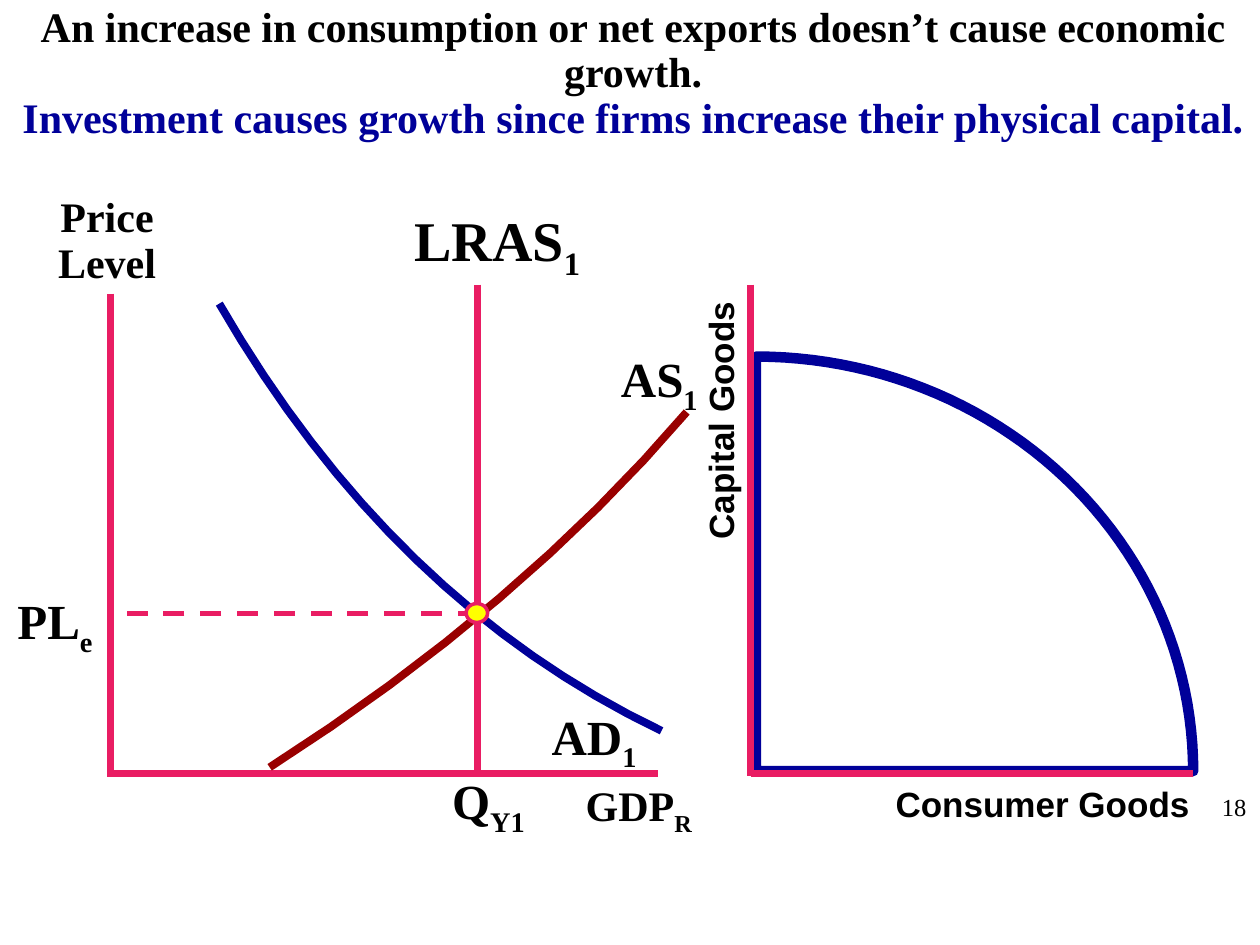
import math
import pptx
import pptx.util
import pptx.dml.color
import pptx.oxml.ns
from pptx.enum.dml import MSO_LINE
from pptx.enum.shapes import MSO_CONNECTOR, MSO_SHAPE
from pptx.enum.text import MSO_ANCHOR, PP_ALIGN
from lxml import etree

# All lengths are cells of a grid, 100 columns by 75 rows.
COLS, ROWS = 100, 75
CELL = pptx.util.Inches(10) // COLS

HUES = {"ink": "000000", "pink": "E91D63", "navy": "000099",
        "red": "990000", "gold": "FFFF00"}
SERIF, SANS = "Times New Roman", "Arial"
ALIGN = {"l": PP_ALIGN.LEFT, "c": PP_ALIGN.CENTER, "r": PP_ALIGN.RIGHT}

# Lines of text: (words, subscript, colour)
TITLE = [
    ("An increase in consumption or net exports doesn’t cause economic growth.", "", "ink"),
    ("Investment causes growth since firms increase their physical capital.", "", "navy"),
]
PRICE = [("Price", "", "ink"), ("Level", "", "ink")]

# Labels: (words, subscript, box, size)
MARKS = [
    ("GDP", "R", (45.5, 61.4, 10.6, 5), 24),
    ("AD", "1", (42.8, 55.6, 9, 5.7), 28),
    ("PL", "e", (0.4, 46.4, 8.1, 5.7), 28),
    ("AS", "1", (48.3, 27.2, 8.4, 5.7), 28),
    ("LRAS", "1", (31.9, 15.8, 15.5, 6.4), 32),
    ("Q", "Y1", (34.9, 60.7, 8.3, 5.7), 28),
]

# Curves: (start, control, end, steps, colour)
CURVES = [
    ((17.4, 24.1), (31.05, 47.75), (52.5, 58), 16, "navy"),
    ((21.4, 60.9), (41.25, 48.2), (54.5, 32.7), 8, "red"),
]

BASE = 61.4
AXES = [
    ((8.8, 23.3), (8.8, 61.6)), ((8.5, BASE), (52.2, BASE)),
    ((59.6, 22.6), (59.6, 61.6)), ((59.6, BASE), (94.7, BASE)),
]
LRAS = ((37.9, 22.6), (37.9, BASE))
GUIDE = ((38, 48.7), (9.3, 48.7))
POINT = (37, 47.9, 1.7, 1.5)
HUB, REACH = (60, 61.2), (34.7, 32.9)  # centre and radii of the frontier

deck = pptx.Presentation()
deck.slide_width, deck.slide_height = COLS * CELL, ROWS * CELL
slide = deck.slides.add_slide(deck.slide_layouts[6])
shapes = slide.shapes


def grid(*cells):
    return [round(c * CELL) for c in cells]


def hue(name):
    return pptx.dml.color.RGBColor.from_string(HUES[name])


def stroke(shape, color, width):
    shape.line.color.rgb = hue(color)
    shape.line.width = pptx.util.Pt(width)


def text(lines, box, size=24, font=SERIF, bold=True, align="l", space=None, turn=0):
    frame = shapes.add_textbox(*grid(*box))
    frame.rotation = turn
    body = frame.text_frame
    body.word_wrap = True
    body.vertical_anchor = MSO_ANCHOR.TOP
    for i, (words, sub, color) in enumerate(lines):
        para = body.paragraphs[0] if i == 0 else body.add_paragraph()
        para.alignment = ALIGN[align]
        if space:
            para.line_spacing = space
        for part, drop in ((words, False), (sub, True)):
            if not part:
                continue
            run = para.add_run()
            run.text = part
            run.font.name, run.font.size = font, pptx.util.Pt(size)
            run.font.bold = bold
            run.font.color.rgb = hue(color)
            if drop:
                run.font._element.set("baseline", "-25000")


def rule(ends, width=4, dash=None):
    line = shapes.add_connector(MSO_CONNECTOR.STRAIGHT, *grid(*ends[0], *ends[1]))
    stroke(line, "pink", width)
    if dash:
        line.line.dash_style = dash
    etree.SubElement(line._element.spPr, pptx.oxml.ns.qn("a:effectLst"))


def trace(points, color, width, close=False):
    """Draw an unfilled outline through the points."""
    dots = [grid(*p) for p in points]
    pen = shapes.build_freeform(*dots[0], scale=1.0)
    pen.add_line_segments(dots[1:], close=close)
    shape = pen.convert_to_shape()
    shape.fill.background()
    shape.shadow.inherit = False
    stroke(shape, color, width)
    etree.SubElement(shape.line._get_or_add_ln(), pptx.oxml.ns.qn("a:round"))


def bend(start, mid, end, steps):
    """Points of a quadratic curve."""
    ts = [i / steps for i in range(steps + 1)]
    return [tuple((1 - t) ** 2 * a + 2 * t * (1 - t) * b + t * t * c
                  for a, b, c in zip(start, mid, end)) for t in ts]


def arc(hub, reach, steps=48):
    """Points of a quarter ellipse, from its top to its right end."""
    turns = [math.pi / 2 * i / steps for i in range(steps + 1)]
    return [(hub[0] + reach[0] * math.sin(a), hub[1] - reach[1] * math.cos(a))
            for a in turns]


for ends in AXES[:2]:
    rule(ends)
rule(GUIDE, 3, MSO_LINE.DASH)
text(TITLE, (0.4, 0, 99.7, 22.8), align="c", space=0.9)
for start, mid, end, steps, color in CURVES:
    trace(bend(start, mid, end, steps), color, 4.5)
text(PRICE, (1.6, 15.1, 13.8, 8.3), align="c", space=0.9)
trace(arc(HUB, REACH) + [HUB], "navy", 6, close=True)
for ends in AXES[2:]:
    rule(ends)
text([("Capital Goods ", "", "ink")], (46.3, 30.8, 21.8, 4.4), 20, SANS, align="c", turn=270)
text([("Consumer Goods", "", "ink")], (70, 61.6, 25.5, 4.4), 20, SANS, align="c")
rule(LRAS, 4.5)
for words, sub, box, size in MARKS:
    text([(words, sub, "ink")], box, size)
text([("18", "", "ink")], (79.1, 62.4, 20.8, 5), 14, bold=False, align="r")

dot = shapes.add_shape(MSO_SHAPE.FLOWCHART_CONNECTOR, *grid(*POINT))
dot.shadow.inherit = False
dot.fill.solid()
dot.fill.fore_color.rgb = hue("gold")
stroke(dot, "pink", 2)

deck.save("out.pptx")
